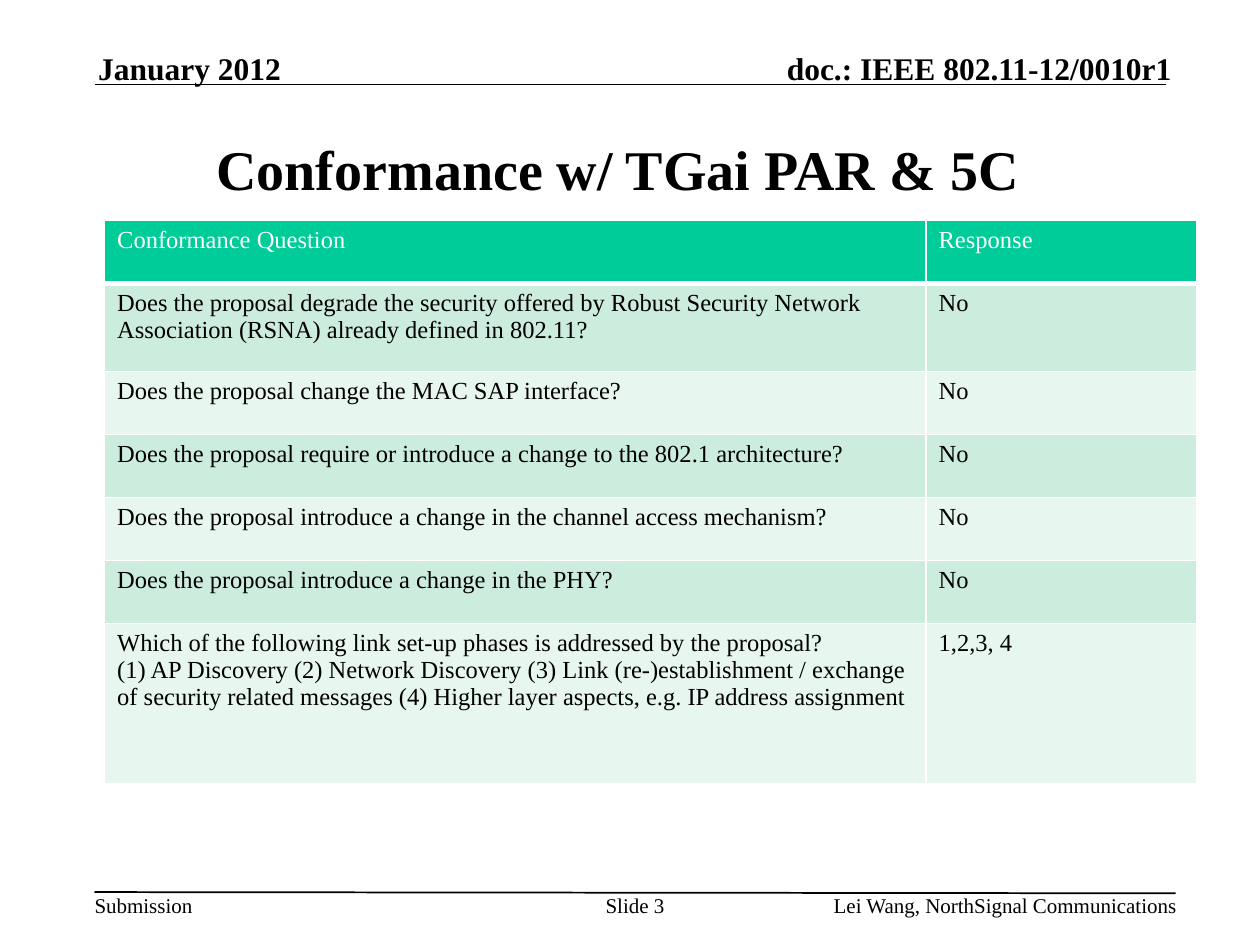
import pptx
import pptx.util
import pptx.dml.color
import pptx.enum.shapes
import pptx.enum.text
import pptx.oxml
import pptx.oxml.ns

COLORS = {
    "ink": "000000",
    "paper": "FFFFFF",
    "header": "00CC99",
    "odd": "CCECDE",
    "even": "E7F6EF",
}
FONT = "Times New Roman"
COLS, ROWS = 100, 75
UNIT = pptx.util.Inches(0.1)
ALIGN = pptx.enum.text.PP_ALIGN
ANCHOR = pptx.enum.text.MSO_ANCHOR

QUESTIONS = [
    ("Conformance Question", "Response"),
    ("Does the proposal degrade the security offered by Robust Security Network "
     "Association (RSNA) already defined in 802.11?", "No"),
    ("Does the proposal change the MAC SAP interface?", "No"),
    ("Does the proposal require or introduce a change to the 802.1 architecture?", "No"),
    ("Does the proposal introduce a change in the channel access mechanism?", "No"),
    ("Does the proposal introduce a change in the PHY?", "No"),
    ("Which of the following link set-up phases is addressed by the proposal?\n"
     "(1) AP Discovery (2) Network Discovery (3) Link (re-)establishment / exchange "
     "of security related messages (4) Higher layer aspects, e.g. IP address assignment",
     "1,2,3, 4"),
]
ROW_HEIGHTS = [5, 7, 5, 5, 5, 5, 12.7]
COL_WIDTHS = [65.2, 21.5]


def grid(*cells):
    return [int(c * UNIT) for c in cells]


def rgb(name):
    return pptx.dml.color.RGBColor.from_string(COLORS[name])


def set_attrs(obj, values):
    for name, value in values.items():
        setattr(obj, name, value)


def fill_text(tf, text, size, color="ink", bold=False, align=ALIGN.LEFT):
    tf.text = text
    for p in tf.paragraphs:
        p.alignment = align
        for r in p.runs:
            set_attrs(r.font, {"name": FONT, "size": pptx.util.Pt(size), "bold": bold})
            r.font.color.rgb = rgb(color)


def add_text(s, at, text, size, anchor=ANCHOR.TOP, inset=(0, 0), wrap=True, **style):
    tf = s.shapes.add_textbox(*grid(*at)).text_frame
    x, y = grid(*inset)
    set_attrs(tf, {
        "word_wrap": wrap, "vertical_anchor": anchor,
        "margin_left": x, "margin_right": x, "margin_top": y, "margin_bottom": y,
    })
    fill_text(tf, text, size, **style)


def add_rule(s, start, end):
    c = s.shapes.add_connector(
        pptx.enum.shapes.MSO_CONNECTOR.STRAIGHT, *grid(*start, *end))
    c.line.width = pptx.util.Pt(1)
    c.line.color.rgb = rgb("ink")
    c._element.spPr.append(
        pptx.oxml.parse_xml(f"<a:effectLst {pptx.oxml.ns.nsdecls('a')}/>"))


def add_borders(cell, bottom):
    tc_pr = cell._tc.get_or_add_tcPr()
    for side, width in {"L": 1, "R": 1, "T": 1, "B": bottom}.items():
        tc_pr.append(pptx.oxml.parse_xml(
            f"<a:ln{side} {pptx.oxml.ns.nsdecls('a')} w='{pptx.util.Pt(width)}'>"
            f"<a:solidFill><a:srgbClr val='{COLORS['paper']}'/></a:solidFill></a:ln{side}>"))


def add_questions(s, left, top):
    size = (sum(COL_WIDTHS), sum(ROW_HEIGHTS))
    table = s.shapes.add_table(
        len(QUESTIONS), len(COL_WIDTHS), *grid(left, top, *size)).table
    for col, width in zip(table.columns, grid(*COL_WIDTHS)):
        col.width = width
    for row, height in zip(table.rows, grid(*ROW_HEIGHTS)):
        row.height = height
    for i, texts in enumerate(QUESTIONS):
        fill = "header" if i == 0 else ("even", "odd")[i % 2]
        for j, text in enumerate(texts):
            cell = table.cell(i, j)
            add_borders(cell, 1 if i else 3)
            cell.fill.solid()
            cell.fill.fore_color.rgb = rgb(fill)
            fill_text(cell.text_frame, text, 14, "ink" if i else "paper")


def main():
    prs = pptx.Presentation()
    set_attrs(prs, {"slide_width": COLS * UNIT, "slide_height": ROWS * UNIT})
    s = prs.slides.add_slide(prs.slide_layouts[6])

    add_rule(s, (7.5, 6.7), (92.5, 6.7))
    add_rule(s, (7.5, 70.8), (93.3, 70.9))
    heading = {"size": 18, "bold": True, "anchor": ANCHOR.BOTTOM}
    add_text(s, (54.7, 3.9, 38.3, 3), "doc.: IEEE 802.11-12/0010r1",
             align=ALIGN.RIGHT, **heading)
    add_text(s, (7.8, 3.9, 26, 3), "January 2012", **heading)
    add_text(s, (7.5, 70.8, 7.8, 2), "Submission", 12, wrap=False)
    add_text(s, (61.2, 70.8, 32.2, 2), "Lei Wang, NorthSignal Communications", 12,
             align=ALIGN.RIGHT)
    add_text(s, (47.5, 70.8, 5.8, 4), "Slide 3", 12, align=ALIGN.CENTER)
    add_text(s, (7.1, 7.5, 85, 11.7), "Conformance w/ TGai PAR & 5C ", 32,
             anchor=ANCHOR.MIDDLE, inset=(1, 0.5), bold=True, align=ALIGN.CENTER)
    add_questions(s, 8.3, 17.5)

    prs.save("out.pptx")


if __name__ == "__main__":
    main()
